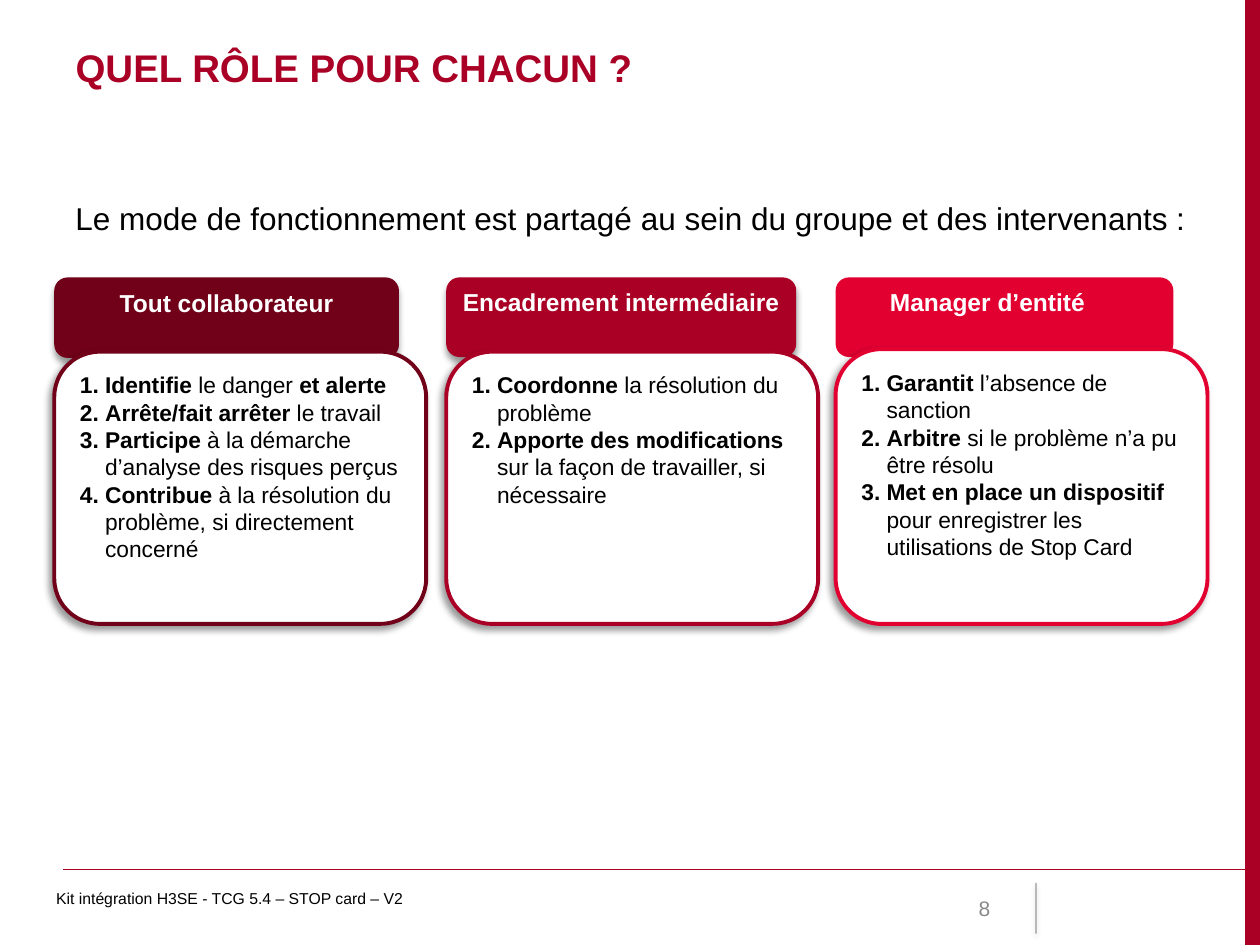
from lxml.etree import SubElement
from pptx import Presentation
from pptx.dml.color import RGBColor
from pptx.enum.shapes import MSO_CONNECTOR, MSO_SHAPE
from pptx.enum.text import MSO_ANCHOR, PP_ALIGN
from pptx.oxml.ns import qn
from pptx.util import Pt

MAROON = RGBColor(0x71, 0x00, 0x19)
CRIMSON = RGBColor(0xAA, 0x00, 0x25)
RED = RGBColor(0xE2, 0x00, 0x31)
BLACK = RGBColor(0, 0, 0)
WHITE = RGBColor(0xFF, 0xFF, 0xFF)
GREY = RGBColor(0x89, 0x89, 0x89)
FONT = "Arial"

# header: (width, height, shape, has shadow, extra right inset); duties: lists of (text, bold)
ROLES = [
    {"title": "Tout collaborateur", "color": MAROON, "left": 31, "body_top": 201,
     "header": (197, 46, MSO_SHAPE.FLOWCHART_ALTERNATE_PROCESS, True, 0),
     "duties": [
         [("Identifie", True), (" le danger ", False), ("et alerte", True)],
         [("Arrête/fait arrêter ", True), ("le travail", False)],
         [("Participe ", True), ("à la démarche d’analyse des risques perçus", False)],
         [("Contribue", True),
          (" à la résolution du problème, si directement concerné", False)]]},
    {"title": "Encadrement intermédiaire", "color": CRIMSON, "left": 255, "body_top": 201,
     "header": (200, 45.5, MSO_SHAPE.ROUNDED_RECTANGLE, True, 0),
     "duties": [
         [("Coordonne ", True), ("la résolution du problème", False)],
         [("Apporte des modifications ", True),
          ("sur la façon de travailler, si nécessaire", False)]]},
    {"title": "Manager d’entité", "color": RED, "left": 477.5, "body_top": 199.5,
     "header": (193, 45.5, MSO_SHAPE.ROUNDED_RECTANGLE, False, 19.5),
     "duties": [
         [("Garantit", True), (" l’absence de sanction", False)],
         [("Arbitre ", True), ("si le problème n’a pu être résolu", False)],
         [("Met en place un dispositif ", True),
          ("pour enregistrer les utilisations de Stop Card", False)]]},
]
HEADER_TOP, BODY_BOTTOM, BODY_WIDTH = 158.5, 356.5, 212.5


def style_font(font, size, color, bold=False):
    font.name, font.size, font.bold = FONT, Pt(size), bold
    font.color.rgb = color


def add_shadow(shape, blur, distance, degrees, opacity):
    """Give the shape a black outer shadow, or an empty effect list at zero opacity."""
    effects = SubElement(shape._element.spPr, qn("a:effectLst"))
    if opacity:
        shadow = SubElement(effects, qn("a:outerShdw"), blurRad=str(Pt(blur)),
                            dist=str(Pt(distance)), dir=str(degrees * 60000), rotWithShape="0")
        black = SubElement(shadow, qn("a:srgbClr"), val="000000")
        SubElement(black, qn("a:alpha"), val=str(opacity * 1000))


def add_block(slide, kind, left, top, width, height, fill, border=None):
    block = slide.shapes.add_shape(kind, Pt(left), Pt(top), Pt(width), Pt(height))
    block.fill.solid()
    block.fill.fore_color.rgb = fill
    if border is None:
        block.line.fill.background()
    else:
        block.line.color.rgb = border
        block.line.width = Pt(2.25)
    block.text_frame.word_wrap = True
    block.text_frame.vertical_anchor = MSO_ANCHOR.TOP
    return block


def add_rule(slide, x1, y1, x2, y2, color, width):
    rule = slide.shapes.add_connector(MSO_CONNECTOR.STRAIGHT, Pt(x1), Pt(y1), Pt(x2), Pt(y2))
    rule.line.color.rgb = color
    rule.line.width = Pt(width)
    return rule


def add_label(slide, left, top, width, height, text, size, color, wrap=True):
    label = slide.shapes.add_textbox(Pt(left), Pt(top), Pt(width), Pt(height))
    label.text_frame.word_wrap = wrap
    label.text_frame.text = text
    style_font(label.text_frame.paragraphs[0].runs[0].font, size, color)
    return label


def add_frame(slide, width, height):
    """Side band, footer rules, footer text and page number."""
    band = add_block(slide, MSO_SHAPE.RECTANGLE, width - 8.5, 0, 8.5, height, CRIMSON)
    band.shadow.inherit = False
    footer_top = height - 35.5
    footer_rule = add_rule(slide, 36, height - 43, width, height - 43, CRIMSON, 0.75)
    add_shadow(footer_rule, 0, 0, 0, 0)
    divider = add_rule(slide, width - 128, footer_top, width - 128, height - 6.5, BLACK, 0.5)
    fill_color = divider.line._ln.find(".//" + qn("a:srgbClr"))
    SubElement(fill_color, qn("a:alpha"), val="70000")
    add_shadow(divider, 3.1, 1.6, 90, 38)

    add_label(slide, 25, footer_top, 438, 29,
              "Kit intégration H3SE - TCG 5.4 – STOP card – V2", 9, BLACK)
    page_number = add_label(slide, width - 204, footer_top, 57, 29, "8", 12, GREY)
    page_number.text_frame.vertical_anchor = MSO_ANCHOR.MIDDLE
    page_number.text_frame.paragraphs[0].alignment = PP_ALIGN.RIGHT


def add_heading(slide, left, top, width):
    title = slide.shapes.title
    title.left, title.top, title.width, title.height = Pt(left), Pt(top), Pt(width), Pt(49.5)
    title.text_frame.text = "QUEL RÔLE POUR CHACUN ?"
    title.text_frame.vertical_anchor = MSO_ANCHOR.TOP
    paragraph = title.text_frame.paragraphs[0]
    paragraph.alignment = PP_ALIGN.LEFT
    style_font(paragraph.runs[0].font, 22, CRIMSON, True)
    add_label(slide, left, top + 88.5, 654.5, 29,
              "Le mode de fonctionnement est partagé au sein du groupe et des intervenants :",
              18, BLACK, wrap=False)


def add_duty(paragraph, parts):
    properties = paragraph._p.get_or_add_pPr()
    properties.set("marL", str(Pt(14.4)))
    properties.set("indent", str(-Pt(14.4)))
    SubElement(properties, qn("a:buFont"), typeface="+mj-lt")
    SubElement(properties, qn("a:buAutoNum"), type="arabicPeriod")
    paragraph.alignment = PP_ALIGN.LEFT
    for text, bold in parts:
        run = paragraph.add_run()
        run.text = text
        style_font(run.font, 13, BLACK, bold)


def add_role(slide, role):
    """Header tab with the numbered duties in the rounded card below it."""
    width, height, kind, has_shadow, right_inset = role["header"]
    header = add_block(slide, kind, role["left"], HEADER_TOP, width, height, role["color"])
    if has_shadow:
        add_shadow(header, 4, 3, 90, 40)
    else:
        header.shadow.inherit = False
    header.text_frame.margin_left = Pt(2)
    header.text_frame.margin_right = Pt(2 + right_inset)
    header.text_frame.text = role["title"]
    paragraph = header.text_frame.paragraphs[0]
    paragraph.alignment = PP_ALIGN.CENTER
    style_font(paragraph.runs[0].font, 14, WHITE, True)

    top = role["body_top"]
    card = add_block(slide, MSO_SHAPE.ROUNDED_RECTANGLE, role["left"], top,
                     BODY_WIDTH, BODY_BOTTOM - top, WHITE, role["color"])
    add_shadow(card, 4, 3, 135, 40)
    for index, parts in enumerate(role["duties"]):
        frame = card.text_frame
        add_duty(frame.add_paragraph() if index else frame.paragraphs[0], parts)


def main():
    presentation = Presentation()
    presentation.slide_width, presentation.slide_height = Pt(720), Pt(540)
    slide = presentation.slides.add_slide(presentation.slide_layouts[5])
    add_frame(slide, 720, 540)
    add_heading(slide, 36, 21.5, 647)
    for role in ROLES:
        add_role(slide, role)
    presentation.save("out.pptx")


if __name__ == "__main__":
    main()
